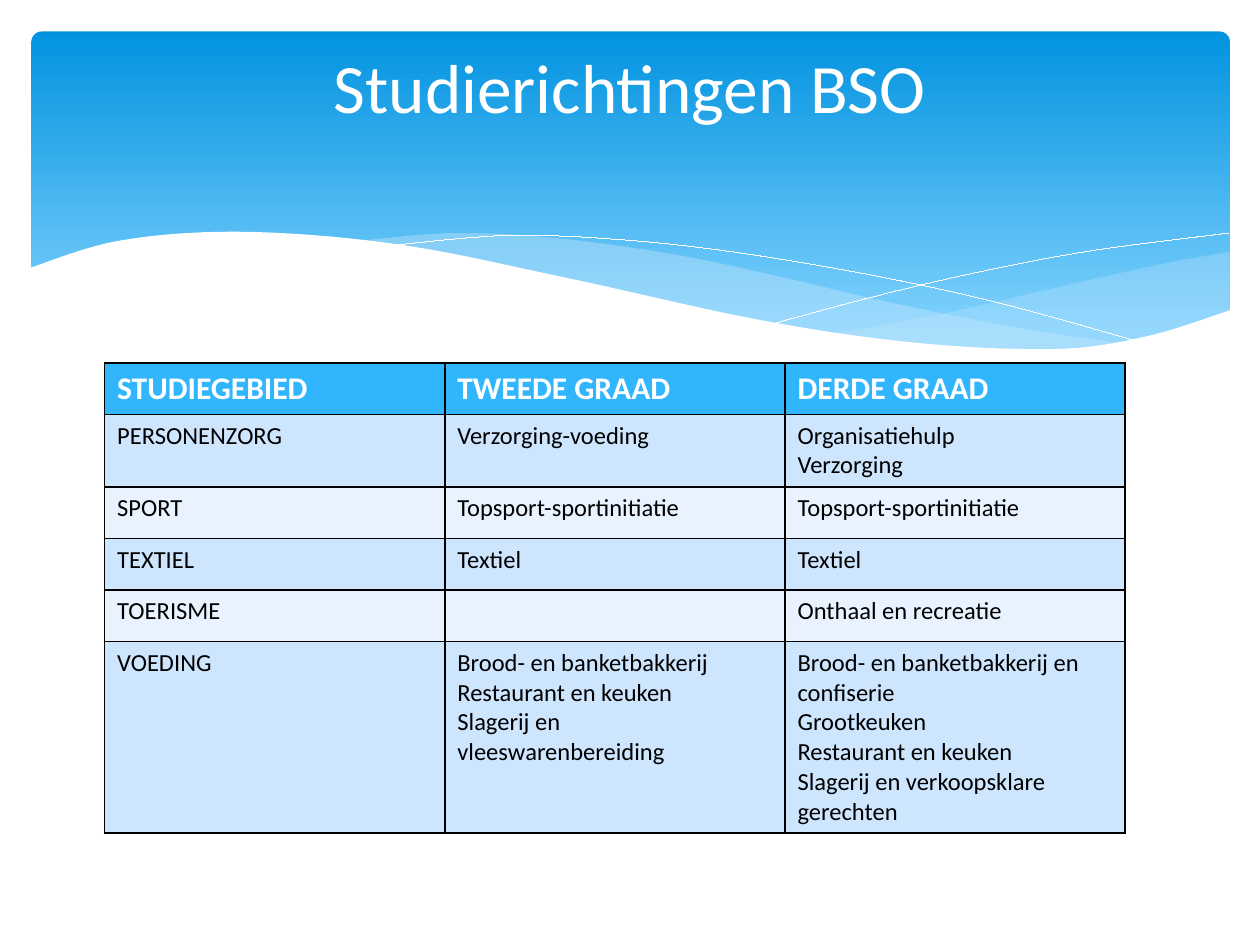
"""Build the slide on BSO study programmes: a wavy banner above a table."""
from lxml.etree import SubElement
from pptx import Presentation
from pptx.dml.color import RGBColor
from pptx.enum.shapes import MSO_SHAPE
from pptx.enum.text import MSO_ANCHOR, PP_ALIGN
from pptx.oxml.ns import qn
from pptx.util import Pt

PX = 9144
STEPS = 10
HUES = {
    "white": "FFFFFF", "black": "000000", "deep": "0293E0", "sky": "83D3FE",
    "mist": "C6E7FC", "head": "31B6FD", "odd": "CEE5FE", "even": "E8F3FF",
}
RGB = {name: RGBColor.from_string(code) for name, code in HUES.items()}


def write(frame, text, size=14, hue="black", bold=False, align=PP_ALIGN.LEFT):
    for num, line in enumerate(text.split("\n")):
        para = frame.paragraphs[0] if num == 0 else frame.add_paragraph()
        para.alignment = align
        run = para.add_run()
        run.text = line
        run.font.name = "Calibri"
        run.font.size = Pt(size)
        run.font.bold = bold
        run.font.color.rgb = RGB[hue]


def curve(knots):
    """Return points on a smooth Catmull-Rom spline through the knots."""
    ends = [knots[0], *knots, knots[-1]]
    points = []
    for near in zip(ends, ends[1:], ends[2:], ends[3:]):
        for step in range(STEPS):
            t = step / STEPS
            points.append(tuple(
                b + t * (c - a) / 2
                + t ** 2 * (2 * a - 5 * b + 4 * c - d) / 2
                + t ** 3 * (3 * b - a - 3 * c + d) / 2
                for a, b, c, d in zip(*near)))
    return points + [knots[-1]]


deck = Presentation()
deck.slide_width, deck.slide_height = 1000 * PX, 750 * PX
slide = deck.slides.add_slide(deck.slide_layouts[6])

band = slide.shapes.add_shape(
    MSO_SHAPE.ROUNDED_RECTANGLE, 25 * PX, 25 * PX, 951 * PX, 270 * PX)
band.adjustments[0] = 0.03
band.shadow.inherit = False
band.line.fill.background()
band.fill.gradient()
band.fill.gradient_angle = 270
for stop, hue, spot in zip(band.fill.gradient_stops, ("deep", "sky"), (0, 0.9)):
    stop.color.rgb = RGB[hue]
    stop.position = spot

right_top = [(661, 265), (753, 248), (861, 223), (935, 207), (976, 200)]
right_base = [(976, 247), (905, 269), (824, 277), (745, 275), (661, 265)]
mid_top = [(286, 191), (361, 185), (442, 189), (541, 203),
           (629, 222), (706, 240), (807, 260), (893, 273)]
mid_base = [(893, 273), (818, 278), (761, 277), (665, 266),
            (566, 248), (449, 222), (362, 203), (286, 191)]
fall = [(309, 195), (401, 187), (489, 190), (582, 200),
        (695, 219), (795, 241), (907, 272)]
rise = [(613, 257), (695, 235), (776, 216), (866, 199), (975, 185)]
front = [(23, 213), (95, 191), (193, 184), (316, 194), (447, 220),
         (603, 254), (726, 272), (837, 277), (910, 267), (977, 246)]
floor = [(977, 329), (23, 329)]

waves = [
    (curve(right_top) + curve(right_base), "mist", 29),
    (curve(mid_top) + curve(mid_base), "mist", 40),
    (curve(fall), None, 100),
    (curve(rise), None, 100),
    (curve(front) + floor, "white", 100),
]
for points, hue, alpha in waves:
    spots = [(x * PX, y * PX) for x, y in points]
    pen = slide.shapes.build_freeform(*spots[0])
    pen.add_line_segments(spots[1:], close=hue is not None)
    shape = pen.convert_to_shape()
    shape.shadow.inherit = False
    if hue:
        shape.fill.solid()
        shape.fill.fore_color.rgb = RGB[hue]
        shape.line.fill.background()
        tint = shape._element.spPr.find(".//" + qn("a:srgbClr"))
        SubElement(tint, qn("a:alpha"), val=str(alpha * 1000))
    else:
        shape.fill.background()
        shape.line.color.rgb = RGB["white"]
        shape.line.width = Pt(0.01)

rows = [
    ("STUDIEGEBIED", "TWEEDE GRAAD", "DERDE GRAAD"),
    ("PERSONENZORG", "Verzorging-voeding", "Organisatiehulp\nVerzorging"),
    ("SPORT", "Topsport-sportinitiatie", "Topsport-sportinitiatie"),
    ("TEXTIEL", "Textiel", "Textiel"),
    ("TOERISME", "", "Onthaal en recreatie"),
    ("VOEDING",
     "Brood- en banketbakkerij\nRestaurant en keuken\n"
     "Slagerij en vleeswarenbereiding",
     "Brood- en banketbakkerij en confiserie\nGrootkeuken\n"
     "Restaurant en keuken\nSlagerij en verkoopsklare gerechten"),
]
frame = slide.shapes.add_table(
    len(rows), len(rows[0]), 83 * PX, 288 * PX, 810 * PX, 369 * PX)
grid = frame.table
for r, row in enumerate(rows):
    grid.rows[r].height = 41 * PX
    for c, text in enumerate(row):
        cell = grid.cell(r, c)
        props = cell._tc.get_or_add_tcPr()
        for side in ("lnL", "lnR", "lnT", "lnB"):
            edge = SubElement(props, qn("a:" + side), w=str(Pt(1)))
            ink = SubElement(edge, qn("a:solidFill"))
            SubElement(ink, qn("a:srgbClr"), val=HUES["black"])
        cell.fill.solid()
        if r == 0:
            cell.fill.fore_color.rgb = RGB["head"]
            write(cell.text_frame, text, size=18, hue="white", bold=True)
        else:
            cell.fill.fore_color.rgb = RGB["odd" if r % 2 else "even"]
            if text:
                write(cell.text_frame, text)
frame.height = 369 * PX

title = slide.shapes.add_textbox(50 * PX, 37 * PX, 900 * PX, 62 * PX).text_frame
title.word_wrap = True
title.vertical_anchor = MSO_ANCHOR.MIDDLE
write(title, "Studierichtingen BSO", size=39.6, hue="white", align=PP_ALIGN.CENTER)

deck.save("out.pptx")
